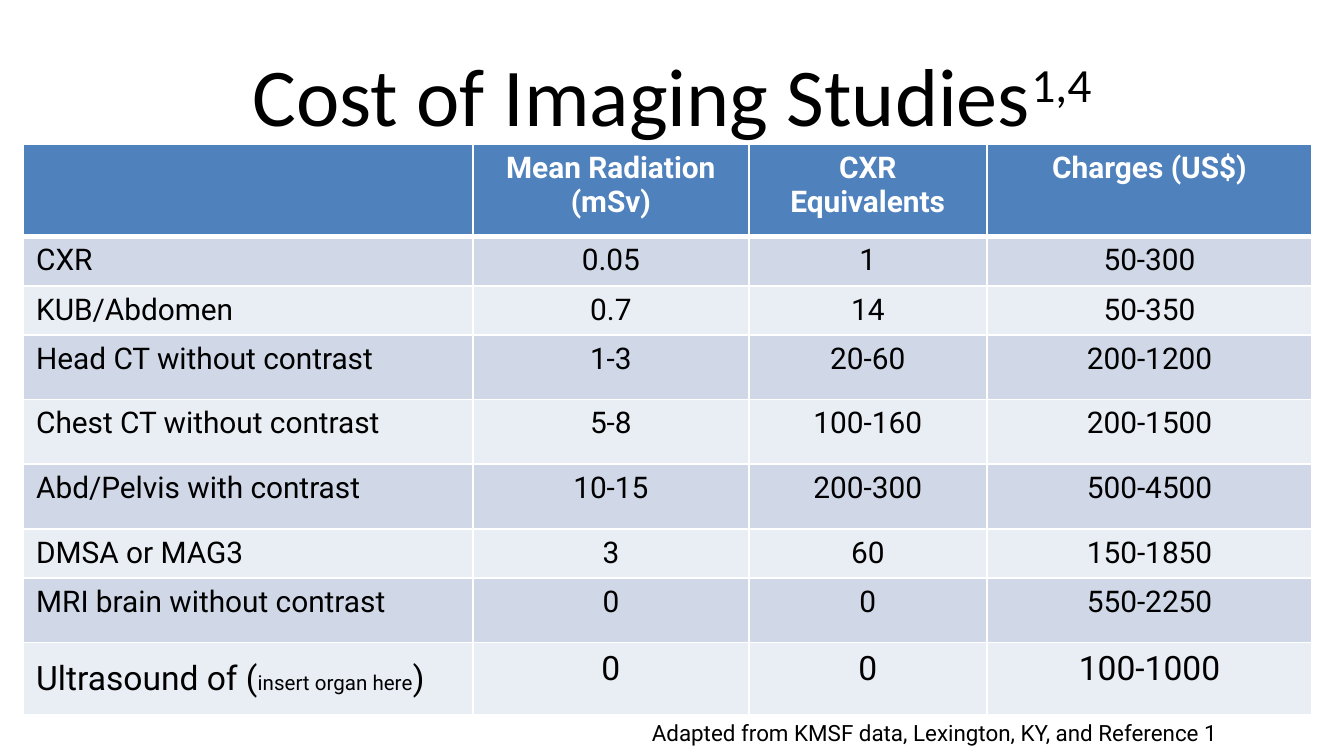
from dataclasses import dataclass

from lxml import etree
from pptx import Presentation
from pptx.dml.color import RGBColor
from pptx.enum.text import MSO_ANCHOR, PP_ALIGN
from pptx.oxml.ns import qn
from pptx.util import Cm, Pt

LEFT, CENTER = PP_ALIGN.LEFT, PP_ALIGN.CENTER
TOP, MIDDLE = MSO_ANCHOR.TOP, MSO_ANCHOR.MIDDLE

COLORS = {
    "header": "4F81BD",
    "odd": "D0D8E8",
    "even": "E9EDF4",
    "border": "FFFFFF",
    "header_text": "FFFFFF",
    "text": "000000",
}
FORMATS = {
    "title": {"name": "Calibri", "size": Pt(44), "bold": False},
    "header": {"name": "Roboto", "size": Pt(16), "bold": True},
    "body": {"name": "Roboto", "size": Pt(16), "bold": False},
    "large": {"name": "Roboto", "size": Pt(18), "bold": False},
    "small": {"name": "Roboto", "size": Pt(11), "bold": False},
    "source": {"name": "Roboto", "size": Pt(12), "bold": False},
}
COLUMN_WIDTHS = (8.51, 5.21, 4.5, 6.15)
HEADER_HEIGHT = 1.75
HEADINGS = ("", "Mean Radiation (mSv)", "CXR\nEquivalents", "Charges (US$)")
SINGLE, TALL, LAST = 0.91, 1.22, 1.37


@dataclass
class Span:
    text: str
    style: str
    color: str = "text"
    baseline: int = 0


@dataclass
class Study:
    name: str
    radiation: str
    equivalents: str
    charges: str
    height: float
    style: str = "body"
    organ_note: str = ""


STUDIES = (
    Study("CXR", "0.05", "1", "50-300", SINGLE),
    Study("KUB/Abdomen", "0.7", "14", "50-350", SINGLE),
    Study("Head CT without contrast", "1-3", "20-60", "200-1200", TALL),
    Study("Chest CT without contrast", "5-8", "100-160", "200-1500", TALL),
    Study("Abd/Pelvis with contrast", "10-15", "200-300", "500-4500", TALL),
    Study("DMSA or MAG3", "3", "60", "150-1850", SINGLE),
    Study("MRI brain without contrast", "0", "0", "550-2250", TALL),
    Study("Ultrasound of (", "0", "0", "100-1000", LAST, "large", "insert organ here"),
)


def write(paragraph, spans: list[Span], align) -> None:
    paragraph.alignment = align
    for span in spans:
        run = paragraph.add_run()
        run.text = span.text
        for attribute, value in FORMATS[span.style].items():
            setattr(run.font, attribute, value)
        run.font.color.rgb = RGBColor.from_string(COLORS[span.color])
        if span.baseline:
            run._r.get_or_add_rPr().set("baseline", str(span.baseline * 1000))


def add_text(slide, box: tuple[float, ...], spans: list[Span], align, anchor) -> None:
    frame = slide.shapes.add_textbox(*map(Cm, box)).text_frame
    frame.word_wrap = True
    frame.vertical_anchor = anchor
    write(frame.paragraphs[0], spans, align)


def paint(cell, fill: str, top: float, bottom: float) -> None:
    cell.fill.solid()
    cell.fill.fore_color.rgb = RGBColor.from_string(COLORS[fill])
    properties = cell._tc.get_or_add_tcPr()
    widths = {"lnL": 1, "lnR": 1, "lnT": top, "lnB": bottom}
    for position, (side, width) in enumerate(widths.items()):
        line = etree.Element(qn(f"a:{side}"), w=str(Pt(width)))
        solid = etree.SubElement(line, qn("a:solidFill"))
        etree.SubElement(solid, qn("a:srgbClr"), val=COLORS["border"])
        properties.insert(position, line)


def fill_header(table) -> None:
    for column, heading in enumerate(HEADINGS):
        cell = table.cell(0, column)
        paint(cell, "header", 1, 3)
        for number, line in enumerate(heading.split("\n")):
            frame = cell.text_frame
            paragraph = frame.add_paragraph() if number else frame.paragraphs[0]
            if line:
                write(paragraph, [Span(line, "header", "header_text")], CENTER)


def fill_study(table, row: int, study: Study) -> None:
    name = [Span(study.name, study.style)]
    if study.organ_note:
        name += [Span(study.organ_note, "small"), Span(")", study.style)]
        table.cell(row, 0).vertical_anchor = MIDDLE
    values = (study.radiation, study.equivalents, study.charges)
    contents = [name] + [[Span(value, study.style)] for value in values]
    for column, spans in enumerate(contents):
        cell = table.cell(row, column)
        paint(cell, "odd" if row % 2 else "even", 3 if row == 1 else 1, 1)
        write(cell.text_frame.paragraphs[0], spans, CENTER if column else LEFT)


def add_costs(slide) -> None:
    heights = [HEADER_HEIGHT] + [study.height for study in STUDIES]
    table = slide.shapes.add_table(
        len(heights), len(COLUMN_WIDTHS),
        Cm(0.43), Cm(2.72), Cm(sum(COLUMN_WIDTHS)), Cm(sum(heights)),
    ).table
    table.horz_banding = False
    for column, width in zip(table.columns, COLUMN_WIDTHS):
        column.width = Cm(width)
    for row, height in zip(table.rows, heights):
        row.height = Cm(height)
    fill_header(table)
    for row, study in enumerate(STUDIES, start=1):
        fill_study(table, row, study)


def main() -> None:
    presentation = Presentation()
    presentation.slide_width, presentation.slide_height = Cm(25.4), Cm(14.29)
    slide = presentation.slides.add_slide(presentation.slide_layouts[6])
    title = [Span("Cost of Imaging Studies", "title"), Span("1,4", "title", baseline=30)]
    add_text(slide, (1.27, 0.58, 22.86, 2.39), title, CENTER, MIDDLE)
    add_costs(slide)
    source = [Span("Adapted from KMSF data, Lexington, KY, and Reference 1", "source")]
    add_text(slide, (12.07, 13.46, 11.43, 0.77), source, LEFT, TOP)
    presentation.save("out.pptx")


if __name__ == "__main__":
    main()
